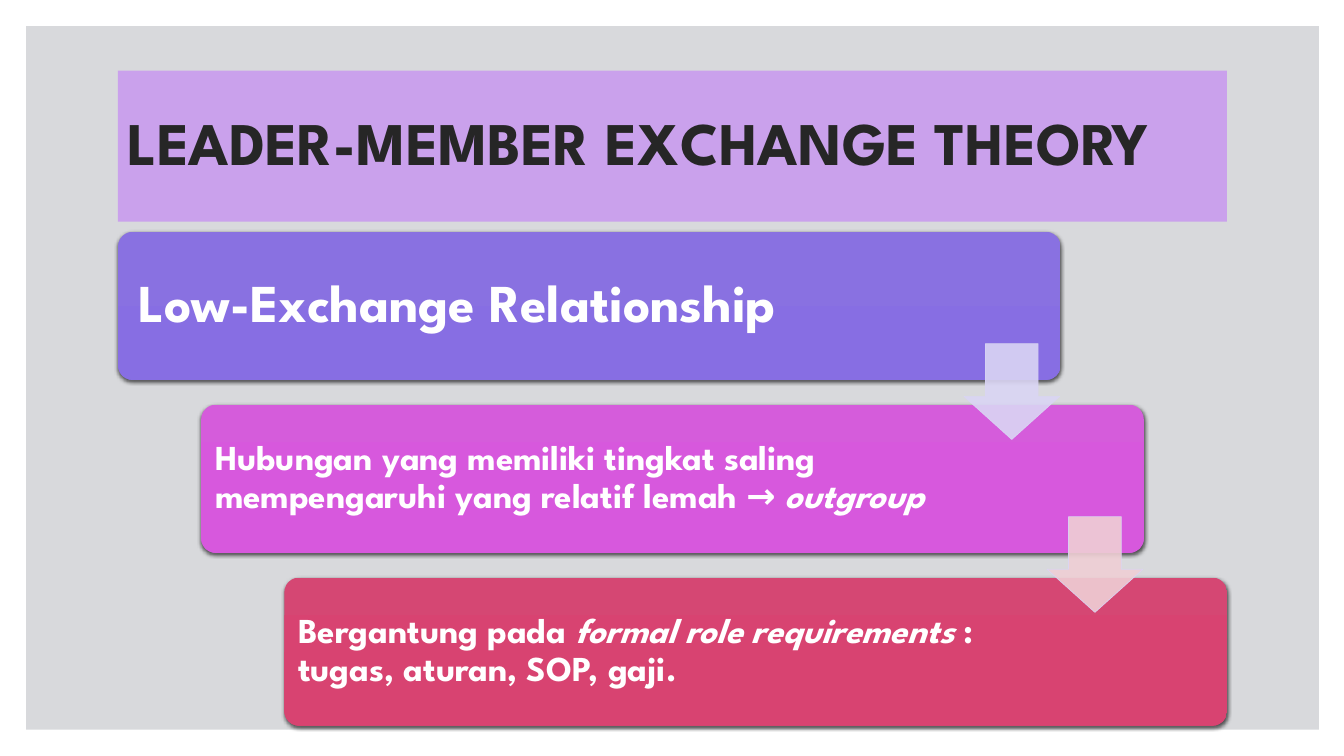
from copy import deepcopy
from lxml.etree import SubElement
from pptx import Presentation
from pptx.dml.color import RGBColor
from pptx.enum.shapes import MSO_SHAPE
from pptx.enum.text import MSO_ANCHOR, PP_ALIGN
from pptx.oxml.ns import qn
from pptx.util import Inches, Pt

HUES = {
    "panel": "D8D9DC", "band": "CAA1EC", "ink": "262626", "text": "FFFFFF",
    "shade": "000000", "edge": "DAD5F4",
}
TITLE = [("LEADER-MEMBER EXCHANGE THEORY", False)]
STEPS = [
    {"runs": [("Low-Exchange Relationship", False)],
     "size": 38, "pad": 0.16, "wide": 7.77,
     "stops": ["8971E1", "876EE3", "866DE2"]},
    {"runs": [("Hubungan yang memiliki tingkat saling mempengaruhi yang relatif lemah → ", False),
              ("outgroup", True)],
     "size": 25, "pad": 0.1, "wide": 7.48,
     "stops": ["D55CDB", "D758DD", "D658DC"]},
    {"runs": [("Bergantung pada ", False), ("formal role requirements", True),
              (" : tugas, aturan, SOP, gaji.", False)],
     "size": 25, "pad": 0.1, "wide": 7.48,
     "stops": ["D54773", "D84371", "D74371"]},
]
ARROWS = ["DAD5F4", "EFCFD5"]
LEFT, TOP, DX, DY = 1.17, 2.3, 0.825, 1.715
FONT = {"name": "League Spartan", "bold": True}


def put(item, form):
    """Set each format value on the item."""
    for key, value in form.items():
        setattr(item, key, value)


def draw(slide, kind, box, fill=None):
    """Add a shape without line or shadow."""
    shape = slide.shapes.add_shape(kind, *map(Inches, box))
    shape.shadow.inherit = False
    shape.line.fill.background()
    if fill:
        shape.fill.solid()
        shape.fill.fore_color.rgb = RGBColor.from_string(fill)
    return shape


def fade(color, alpha):
    """Give a colour element an opacity in percent."""
    SubElement(color, qn("a:alpha")).set("val", str(alpha * 1000))


def write(shape, runs, size, hue, pad_x, pad_y):
    """Fill a shape with one paragraph of runs."""
    frame = shape.text_frame
    put(frame, {
        "word_wrap": True, "vertical_anchor": MSO_ANCHOR.MIDDLE,
        "margin_left": Inches(pad_x), "margin_right": Inches(pad_x),
        "margin_top": Inches(pad_y), "margin_bottom": Inches(pad_y),
    })
    para = frame.paragraphs[0]
    put(para, {"alignment": PP_ALIGN.LEFT, "line_spacing": 0.9})
    for text, slant in runs:
        run = para.add_run()
        run.text = text
        put(run.font, {**FONT, "size": Pt(size), "italic": slant})
        run.font.color.rgb = RGBColor.from_string(hue)


def blend(shape, hues):
    """Apply an even gradient from top to bottom."""
    shape.fill.gradient()
    shape.fill.gradient_angle = 270
    stops = shape._element.spPr.find(".//" + qn("a:gsLst"))
    stops.append(deepcopy(stops[-1]))
    for i, (stop, hue) in enumerate(zip(shape.fill.gradient_stops, hues)):
        stop.color.rgb = RGBColor.from_string(hue)
        stop.position = i / (len(hues) - 1)


def shade(shape):
    """Cast a soft shadow downwards."""
    effect = shape._element.spPr.find(qn("a:effectLst"))
    outer = SubElement(effect, qn("a:outerShdw"))
    form = {"blurRad": Pt(3), "dist": Pt(1), "dir": 5400000, "algn": "ctr", "rotWithShape": 0}
    for key, value in form.items():
        outer.set(key, str(value))
    color = SubElement(outer, qn("a:srgbClr"))
    color.set("val", HUES["shade"])
    fade(color, 63)


def main():
    """Build the slide and save it."""
    deck = Presentation()
    put(deck, {"slide_width": Inches(13.33), "slide_height": Inches(7.5)})
    slide = deck.slides.add_slide(deck.slide_layouts[6])
    draw(slide, MSO_SHAPE.RECTANGLE, (0.26, 0.26, 12.82, 6.98), HUES["panel"])
    band = draw(slide, MSO_SHAPE.RECTANGLE, (LEFT, 0.7, 11, 1.5), HUES["band"])
    write(band, TITLE, 43.2, HUES["ink"], 0.1, 0.05)

    for i, step in enumerate(STEPS):
        x, y = LEFT + i * DX, TOP + i * DY
        card = draw(slide, MSO_SHAPE.ROUNDED_RECTANGLE, (x, y, 9.35, 1.47))
        card.adjustments[0] = 0.1
        blend(card, step["stops"])
        shade(card)
        box = (x + 0.04, y + 0.04, step["wide"], 1.38)
        label = slide.shapes.add_textbox(*map(Inches, box))
        write(label, step["runs"], step["size"], HUES["text"], step["pad"], step["pad"])

    for i, hue in enumerate(ARROWS):
        box = (9.56 + i * DX, 3.41 + i * DY, 0.95, 0.95)
        arrow = draw(slide, MSO_SHAPE.DOWN_ARROW, box, hue)
        arrow.adjustments[0], arrow.adjustments[1] = 0.55, 0.45
        arrow.line.color.rgb = RGBColor.from_string(HUES["edge"])
        arrow.line.width = Pt(0.5)
        for color in arrow._element.spPr.findall(".//" + qn("a:srgbClr")):
            fade(color, 90)

    deck.save("out.pptx")


if __name__ == "__main__":
    main()
